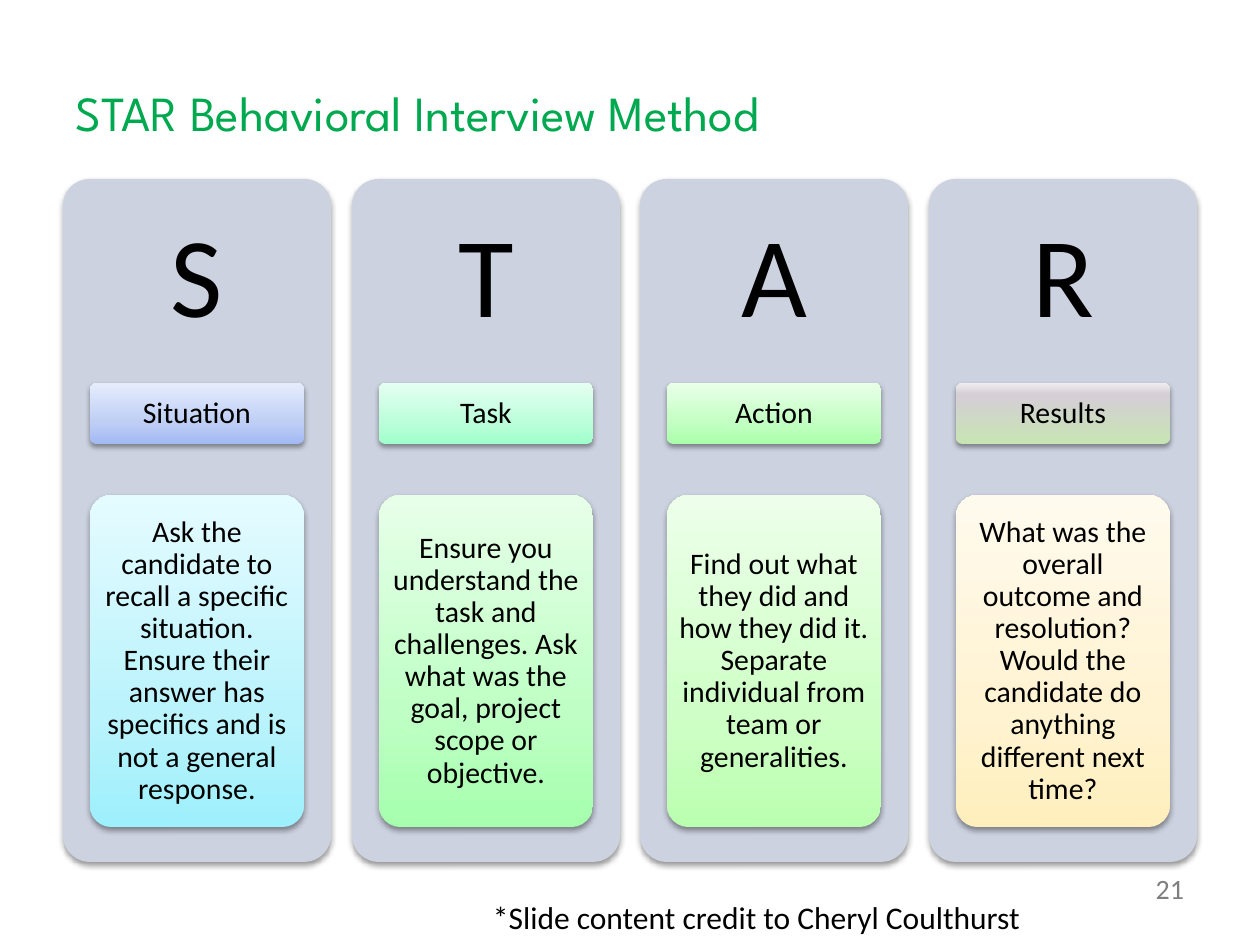
from pptx import Presentation
from pptx.dml.color import RGBColor
from pptx.enum.shapes import MSO_SHAPE
from pptx.enum.text import MSO_ANCHOR, PP_ALIGN
from pptx.oxml import parse_xml
from pptx.oxml.ns import nsdecls, qn
from pptx.util import Emu, Pt

PX_PER_INCH = 126
COLORS = {"title": "00A94F", "panel": "CCD2E0", "text": "000000", "number": "7F7F7F"}

# Letter, label, body text, label gradient, body gradient; stops run from bottom to top.
COLUMNS = [
    ("S", "Situation",
     "Ask the candidate to recall a specific situation. Ensure their answer has "
     "specifics and is not a general response.",
     [(0, "A2B9F3"), (35, "BECEF5"), (100, "E5ECFC")],
     [(0, "9DF0FC"), (35, "BBF3FC"), (100, "E4FBFF")]),
    ("T", "Task",
     "Ensure you understand the task and challenges. Ask what was the goal, "
     "project scope or objective.",
     [(0, "9FFFCC"), (35, "BBFFDA"), (100, "E5FFF1")],
     [(0, "A5FFAD"), (35, "BFFFC5"), (100, "E7FFE9")]),
    ("A", "Action",
     "Find out what they did and how they did it. Separate individual from team "
     "or generalities.",
     [(0, "AAFFAA"), (35, "C3FFC3"), (100, "E8FFE8")],
     [(0, "BBFFB0"), (35, "CFFFC7"), (100, "EDFFEA")]),
    ("R", "Results",
     "What was the overall outcome and resolution? Would the candidate do "
     "anything different next time?",
     [(0, "C7E5B4"), (81, "D5CED5"), (100, "EFEDEF")],
     [(0, "FFEFBD"), (35, "FFF3D1"), (100, "FFFAEE")]),
]

LEFT, TOP, TOTAL_W = 63, 179, 1134
PANEL_W, PANEL_H, LETTER_H = 268, 683, 204
CARD_INDENT, CARD_W = 27, 214


def px(n):
    return Emu(round(n * 914400 / PX_PER_INCH))


class SlideBuilder:
    def __init__(self, slide, font="Calibri"):
        self.slide = slide
        self.font = font

    def set_text(self, sp, text, size, color="text", font=None, align=PP_ALIGN.CENTER,
                 anchor=MSO_ANCHOR.MIDDLE, inset=(6, 5), spacing=None):
        tf = sp.text_frame
        tf.word_wrap = True
        tf.vertical_anchor = anchor
        tf.margin_left = tf.margin_right = px(inset[0])
        tf.margin_top = tf.margin_bottom = px(inset[1])
        p = tf.paragraphs[0]
        p.text = text
        p.alignment = align
        p.line_spacing = spacing
        p.font.name = font or self.font
        p.font.size = Pt(size)
        p.font.color.rgb = RGBColor.from_string(COLORS[color])

    def text(self, box, text, size, **style):
        sp = self.slide.shapes.add_textbox(*map(px, box))
        self.set_text(sp, text, size, **style)

    def card(self, box, fill):
        """Add a shadowed rounded rectangle; fill is a hex string or gradient stops."""
        sp = self.slide.shapes.add_shape(MSO_SHAPE.ROUNDED_RECTANGLE, *map(px, box))
        sp.adjustments[0] = 0.1
        sp.line.fill.background()
        if isinstance(fill, str):
            sp.fill.solid()
            sp.fill.fore_color.rgb = RGBColor.from_string(fill)
        else:
            self.gradient(sp, fill)
        self.shadow(sp)
        return sp

    def gradient(self, sp, stops):
        sp.fill.gradient()
        gs = "".join(f'<a:gs pos="{pos * 1000}"><a:srgbClr val="{color}"/></a:gs>'
                     for pos, color in stops)
        spPr = sp.element.spPr
        spPr.replace(spPr.find(qn("a:gradFill")), parse_xml(
            f'<a:gradFill {nsdecls("a")} rotWithShape="1"><a:gsLst>{gs}</a:gsLst>'
            '<a:lin ang="16200000" scaled="0"/></a:gradFill>'))

    def shadow(self, sp):
        sp.shadow.inherit = False
        sp.element.spPr.find(qn("a:effectLst")).append(parse_xml(
            f'<a:outerShdw {nsdecls("a")} blurRad="40000" dist="20000" dir="5400000" '
            'rotWithShape="0"><a:srgbClr val="000000"><a:alpha val="38000"/>'
            '</a:srgbClr></a:outerShdw>'))

    def column(self, x, letter, label, body, label_fill, body_fill):
        self.card((x, TOP, PANEL_W, PANEL_H), COLORS["panel"])
        self.text((x, TOP, PANEL_W, LETTER_H), letter, 65, inset=(34, 34), spacing=0.9)
        for y, h, text, fill in ((383, 61, label, label_fill), (495, 332, body, body_fill)):
            sp = self.card((x + CARD_INDENT, y, CARD_W, h), fill)
            self.set_text(sp, text, 17, spacing=0.9)


def main():
    prs = Presentation()
    prs.slide_width, prs.slide_height = px(1260), px(945)
    s = SlideBuilder(prs.slides.add_slide(prs.slide_layouts[6]))

    s.text((1092, 863, 105, 50), "21", 16, color="number", align=PP_ALIGN.RIGHT,
           inset=(13, 6))
    s.text((LEFT, 38, TOTAL_W, 109), "STAR Behavioral Interview Method", 28,
           color="title", font="League Spartan", align=PP_ALIGN.LEFT,
           anchor=MSO_ANCHOR.BOTTOM, inset=(13, 6))

    pitch = (TOTAL_W - PANEL_W) / (len(COLUMNS) - 1)
    for i, column in enumerate(COLUMNS):
        s.column(round(LEFT + i * pitch), *column)

    s.text((480, 892, 663, 53), "*Slide content credit to Cheryl Coulthurst", 18,
           align=PP_ALIGN.LEFT, anchor=MSO_ANCHOR.TOP, inset=(13, 6))
    prs.save("out.pptx")


if __name__ == "__main__":
    main()
